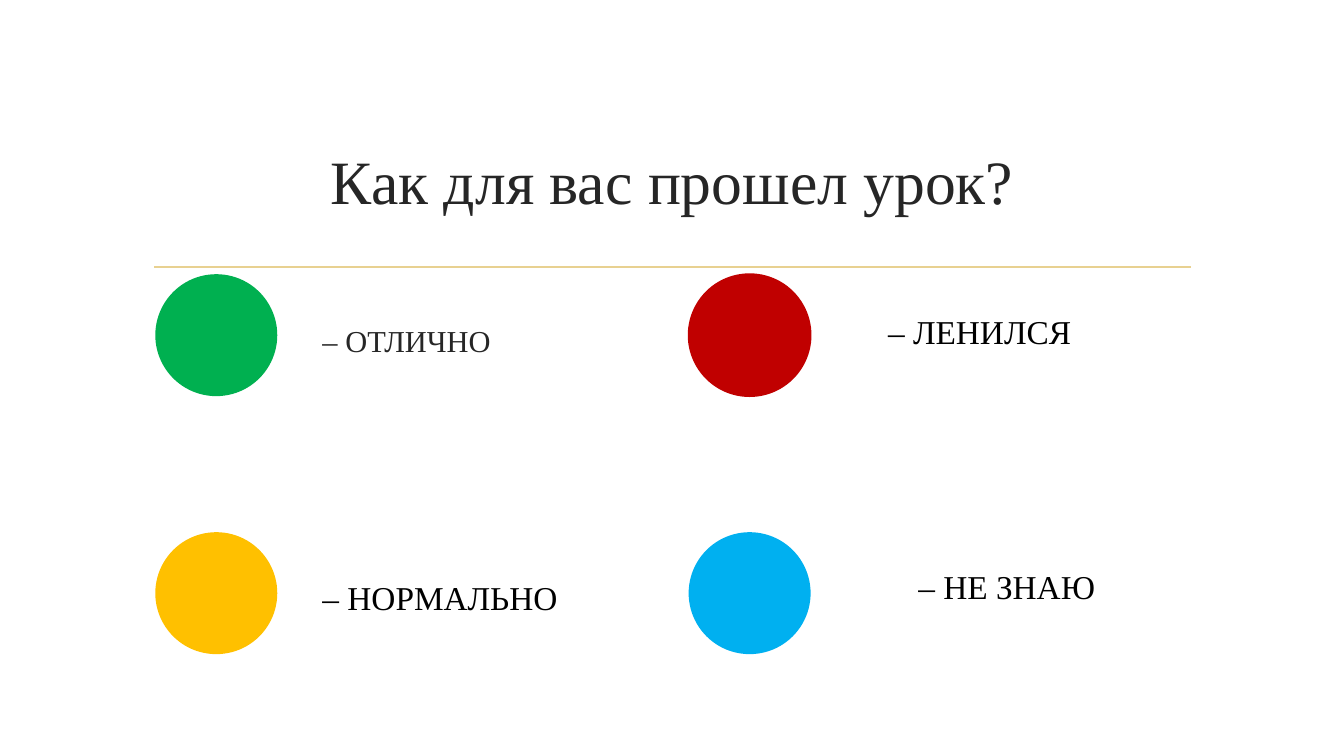
from pptx import Presentation
from pptx.dml.color import RGBColor
from pptx.enum.shapes import MSO_CONNECTOR, MSO_SHAPE
from pptx.enum.text import MSO_ANCHOR as Anchor, PP_ALIGN as Align
from pptx.oxml.ns import qn
from pptx.util import Inches, Pt
from lxml import etree

FONT = "Times New Roman"
DIAMETER = 1.21


def rgb(value):
    return RGBColor.from_string(value)


def place(s, left, top, width, height):
    s.left, s.top = Inches(left), Inches(top)
    s.width, s.height = Inches(width), Inches(height)


def write(s, text, size=23.8, color="000000", align=Align.LEFT,
          anchor=Anchor.TOP, spacing=1.0):
    tf = s.text_frame
    tf.word_wrap = True
    tf.vertical_anchor = anchor
    p = tf.paragraphs[0]
    p.alignment, p.line_spacing = align, spacing
    p.space_before = Pt(0)
    r = p.add_run()
    r.text = text
    r.font.name, r.font.size = FONT, Pt(size)
    r.font.color.rgb = rgb(color)


def add_title(slide, text):
    s = slide.shapes.title
    place(s, 1.42, 1.07, 10.5, 1.43)
    write(s, text, size=44, color="262626", align=Align.CENTER,
          anchor=Anchor.MIDDLE)


def add_rule(slide, left, right, y, color):
    s = slide.shapes.add_connector(MSO_CONNECTOR.STRAIGHT, Inches(left),
                                   Inches(y), Inches(right), Inches(y))
    s.line.color.rgb = rgb(color)
    s.line.width = Pt(1.25)
    etree.SubElement(s._element.spPr, qn("a:effectLst"))


def add_circle(slide, left, top, color, outlined=False):
    s = slide.shapes.add_shape(MSO_SHAPE.OVAL, Inches(left), Inches(top),
                               Inches(DIAMETER), Inches(DIAMETER))
    s.shadow.inherit = False
    s.fill.solid()
    s.fill.fore_color.rgb = rgb(color)
    if outlined:
        s.line.color.rgb = rgb(color)
        s.line.width = Pt(1.25)
    else:
        s.line.fill.background()


def add_label(slide, text, box, **fmt):
    s = slide.shapes.add_textbox(*map(Inches, box))
    write(s, text, **fmt)


def main():
    prs = Presentation()
    prs.slide_width, prs.slide_height = Inches(13.33), Inches(7.5)
    slide = prs.slides.add_slide(prs.slide_layouts[5])

    # Heading
    add_rule(slide, 1.53, 11.81, 2.65, "E8D191")
    add_title(slide, "Как для вас прошел урок?")

    # Answer circles in two columns and two rows
    left, right = 1.54, 6.83
    upper, lower = 2.72, 5.28
    add_circle(slide, left, upper, "00B050")
    add_circle(slide, left, lower, "FFC000")
    add_circle(slide, right, upper, "C00000", outlined=True)
    add_circle(slide, right, lower, "00B0F0")

    # Answer labels
    add_label(slide, "– ОТЛИЧНО", (3.1, 3.15, 2.05, 0.41),
              size=21.7, color="262626")
    add_label(slide, "– НОРМАЛЬНО", (3.1, 5.75, 2.76, 0.53), spacing=0.8)
    add_label(slide, "– ЛЕНИЛСЯ", (8.71, 3.15, 3.34, 0.41), spacing=0.7)
    add_label(slide, "– НЕ ЗНАЮ", (9.01, 5.68, 2.05, 0.41), spacing=0.7)

    prs.save("out.pptx")


if __name__ == "__main__":
    main()
